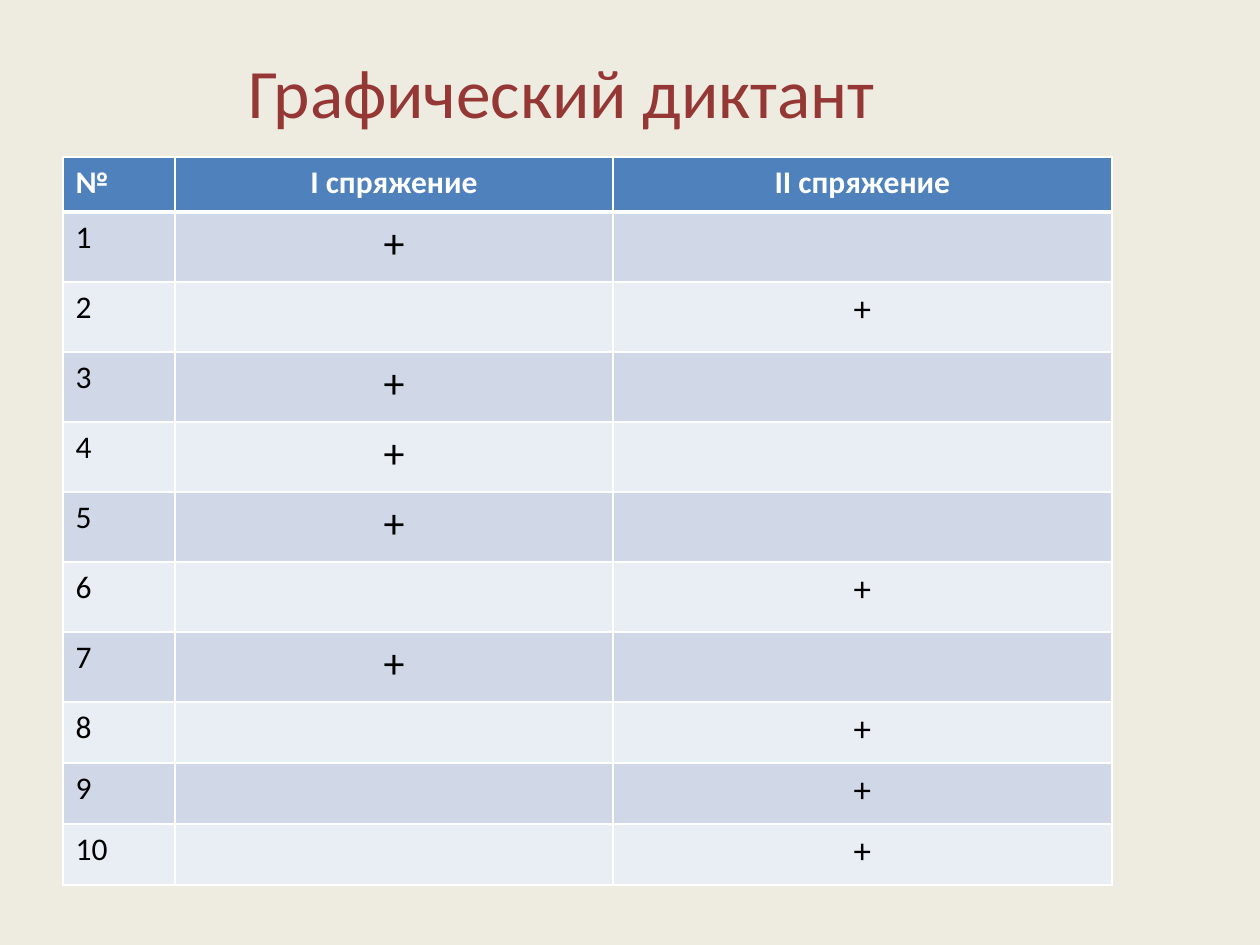
"""Build a slide with a table that sorts ten verbs by conjugation."""
from dataclasses import dataclass
from typing import Any

from lxml import etree
from pptx import Presentation
from pptx import util as u
from pptx.dml.color import RGBColor
from pptx.enum import text
from pptx.oxml import ns

SCALE = 914400 / 126


@dataclass(frozen=True)
class Theme:
    face: str = "Calibri"
    back: str = "EEECE1"
    title: str = "953735"
    head: str = "4F81BD"
    bands: tuple[str, str] = ("D0D8E8", "E9EDF4")
    white: str = "FFFFFF"
    black: str = "000000"
    big: float = 39.6
    base: int = 18
    marks: tuple[int, int] = (24, 20)
    thin: int = 1
    thick: int = 3


@dataclass(frozen=True)
class Entry:
    words: str
    fill: str
    ink: str
    size: float
    bold: bool
    mid: bool
    top: int
    base: int


THEME = Theme()
HEADS = ("№", "I спряжение", "II спряжение")
ANSWERS = (1, 2, 1, 1, 1, 2, 1, 2, 2, 2)
WIDTHS = (112, 438, 499)
HEIGHTS = (55, *[70] * 7, *[61] * 3)


def px(count: int) -> u.Emu:
    return u.Emu(round(count * SCALE))


def style(para: Any, size: float, ink: str, bold: bool, mid: bool) -> None:
    para.alignment = text.PP_ALIGN.CENTER if mid else text.PP_ALIGN.LEFT
    look = {"name": THEME.face, "size": u.Pt(size), "bold": bold}
    for key, value in look.items():
        setattr(para.font, key, value)
    para.font.color.rgb = RGBColor.from_string(ink)


def edge(cell: Any, entry: Entry) -> None:
    props = cell._tc.get_or_add_tcPr()
    sides = {"lnL": THEME.thin, "lnR": THEME.thin,
             "lnT": entry.top, "lnB": entry.base}
    for spot, (tag, width) in enumerate(sides.items()):
        line = etree.Element(ns.qn(f"a:{tag}"), w=str(u.Pt(width)))
        fill = etree.SubElement(line, ns.qn("a:solidFill"))
        etree.SubElement(fill, ns.qn("a:srgbClr"), val=THEME.white)
        props.insert(spot, line)


def fill_cell(cell: Any, entry: Entry) -> None:
    cell.fill.solid()
    cell.fill.fore_color.rgb = RGBColor.from_string(entry.fill)
    cell.text = entry.words
    style(cell.text_frame.paragraphs[0], entry.size, entry.ink,
          entry.bold, entry.mid)
    edge(cell, entry)


def plan(row: int, col: int) -> Entry:
    if row == 0:
        return Entry(HEADS[col], THEME.head, THEME.white, THEME.base,
                     True, col > 0, THEME.thin, THEME.thick)
    mark = "+" if ANSWERS[row - 1] == col else ""
    return Entry(
        mark if col else str(row),
        THEME.bands[(row - 1) % 2],
        THEME.black,
        THEME.marks[col - 1] if mark else THEME.base,
        False,
        col > 0,
        THEME.thick if row == 1 else THEME.thin,
        THEME.thin,
    )


def add_title(slide: Any, words: str) -> None:
    title = slide.shapes.title
    place = {"left": 63, "top": 44, "width": 998, "height": 93}
    for key, value in place.items():
        setattr(title, key, px(value))
    frame = title.text_frame
    frame.text = words
    look = {"word_wrap": True, "auto_size": text.MSO_AUTO_SIZE.NONE,
            "vertical_anchor": text.MSO_ANCHOR.MIDDLE}
    for key, value in look.items():
        setattr(frame, key, value)
    style(frame.paragraphs[0], THEME.big, THEME.title, False, True)


def add_grid(slide: Any) -> None:
    table = slide.shapes.add_table(
        len(HEIGHTS), len(WIDTHS), px(63), px(157),
        px(sum(WIDTHS)), px(sum(HEIGHTS))).table
    table.horz_banding = False
    for col, width in zip(table.columns, WIDTHS):
        col.width = px(width)
    for row, height in zip(table.rows, HEIGHTS):
        row.height = px(height)
    for row in range(len(HEIGHTS)):
        for col in range(len(WIDTHS)):
            fill_cell(table.cell(row, col), plan(row, col))


def main() -> None:
    deck = Presentation()
    deck.slide_width, deck.slide_height = px(1260), px(945)
    slide = deck.slides.add_slide(deck.slide_layouts[5])
    slide.background.fill.solid()
    slide.background.fill.fore_color.rgb = RGBColor.from_string(THEME.back)
    add_title(slide, "Графический диктант")
    add_grid(slide)
    deck.save("out.pptx")


if __name__ == "__main__":
    main()
